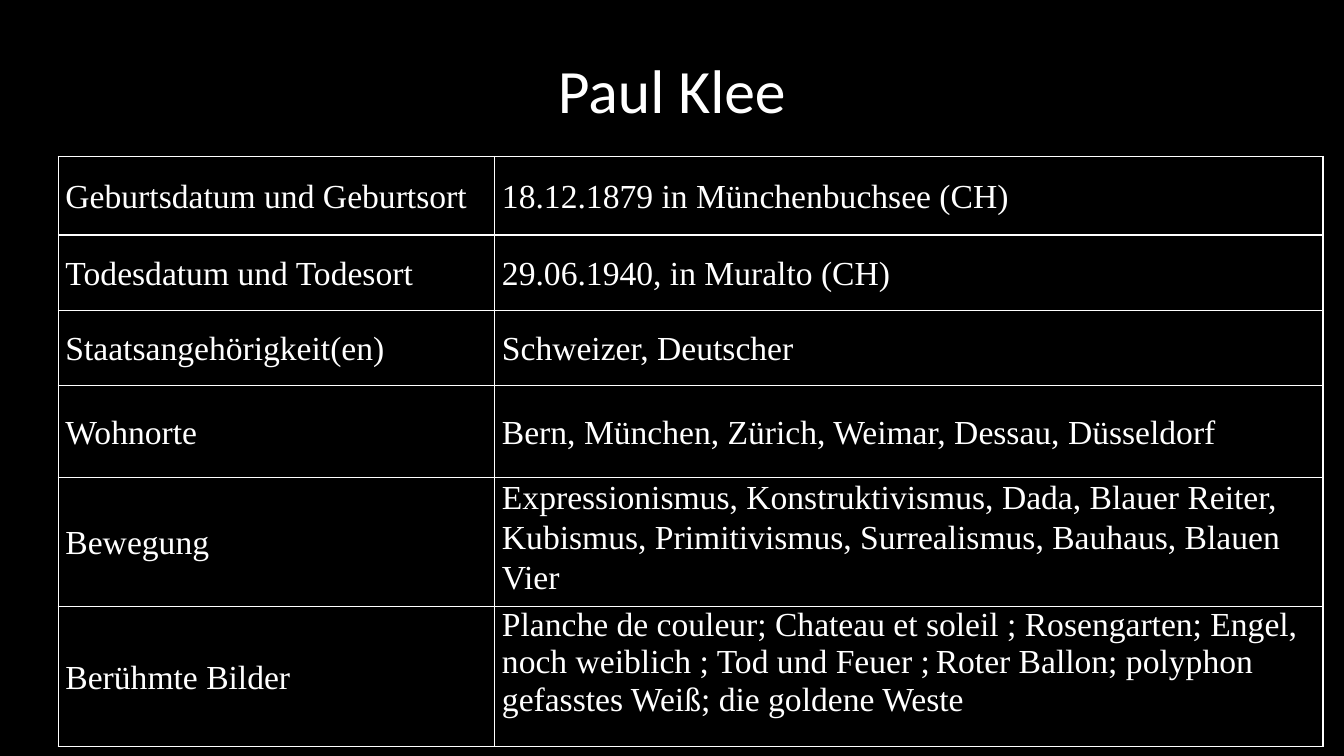
from lxml import etree
from pptx import Presentation
from pptx.dml.color import RGBColor
from pptx.enum.text import MSO_ANCHOR, PP_ALIGN
from pptx.oxml.ns import qn
from pptx.util import Cm, Pt

MIDDLE, TOP = MSO_ANCHOR.MIDDLE, MSO_ANCHOR.TOP
CENTER = PP_ALIGN.CENTER
BLACK = RGBColor(0, 0, 0)
WHITE = RGBColor(255, 255, 255)
TITLE_FONT = "Calibri"
TABLE_FONT = "Times New Roman"
THIN, THICK = 1, 1.5

COLUMN_WIDTHS = (11, 20.87)
# label, value, row height in cm, anchor of the value
FACTS = (
    ("Geburtsdatum und Geburtsort", "18.12.1879 in Münchenbuchsee (CH)", 1.98, MIDDLE),
    ("Todesdatum und Todesort", "29.06.1940, in Muralto (CH)", 1.9, MIDDLE),
    ("Staatsangehörigkeit(en)", "Schweizer, Deutscher", 1.9, MIDDLE),
    ("Wohnorte", "Bern, München, Zürich, Weimar, Dessau, Düsseldorf", 2.31, MIDDLE),
    ("Bewegung", "Expressionismus, Konstruktivismus, Dada, Blauer Reiter, Kubismus, "
     "Primitivismus, Surrealismus, Bauhaus, Blauen Vier", 3.2, TOP),
    ("Berühmte Bilder", "Planche de couleur; Chateau et soleil ; Rosengarten; Engel, "
     "noch weiblich ; Tod und Feuer ;", 3.51, TOP),
)
MORE_WORKS = "Roter Ballon; polyphon gefasstes Weiß; die goldene Weste"


def format_run(run, font_name, size, color=WHITE):
    run.font.name = font_name
    run.font.size = Pt(size)
    run.font.color.rgb = color


def add_title(slide, text):
    title = slide.shapes.add_textbox(Cm(2.33), Cm(1.01), Cm(29.21), Cm(2.7))
    text_frame = title.text_frame
    text_frame.word_wrap = True
    text_frame.vertical_anchor = MIDDLE
    text_frame.text = text
    paragraph = text_frame.paragraphs[0]
    paragraph.alignment = CENTER
    paragraph.line_spacing = 0.9
    format_run(paragraph.runs[0], TITLE_FONT, 44)


def set_borders(cell, top, bottom):
    """Draw white cell borders; top and bottom are widths in points."""
    properties = cell._tc.get_or_add_tcPr()
    for side, width in (("L", THIN), ("R", THIN), ("T", top), ("B", bottom)):
        line = etree.SubElement(properties, qn(f"a:ln{side}"), w=str(Pt(width)))
        fill = etree.SubElement(line, qn("a:solidFill"))
        etree.SubElement(fill, qn("a:srgbClr"), val=str(WHITE))


def fill_cell(cell, text, anchor):
    cell.margin_left = cell.margin_right = Cm(0.18)
    cell.margin_top = cell.margin_bottom = 0
    cell.vertical_anchor = anchor
    cell.fill.solid()
    cell.fill.fore_color.rgb = BLACK
    cell.text_frame.text = text
    paragraph = cell.text_frame.paragraphs[0]
    paragraph.line_spacing = 1.07
    format_run(paragraph.runs[0], TABLE_FONT, 24)


def append_works(cell):
    """Continue the list of works after a narrower space."""
    paragraph = cell.text_frame.paragraphs[0]
    paragraph.line_spacing = 1.0
    for text, font_name, size, color in ((" ", TITLE_FONT, 18, BLACK),
                                         (MORE_WORKS, TABLE_FONT, 24, WHITE)):
        run = paragraph.add_run()
        run.text = text
        format_run(run, font_name, size, color)


def add_facts_table(slide):
    height = sum(fact[2] for fact in FACTS)
    frame = slide.shapes.add_table(len(FACTS), len(COLUMN_WIDTHS), Cm(1.47), Cm(3.94),
                                   Cm(sum(COLUMN_WIDTHS)), Cm(height))
    table = frame.table
    table.first_row = table.horz_banding = False
    for column, width in zip(table.columns, COLUMN_WIDTHS):
        column.width = Cm(width)
    for index, (label, value, row_height, value_anchor) in enumerate(FACTS):
        table.rows[index].height = Cm(row_height)
        top = THICK if index == 1 else THIN
        bottom = THICK if index == 0 else THIN
        for column, (text, anchor) in enumerate(((label, MIDDLE), (value, value_anchor))):
            cell = table.cell(index, column)
            set_borders(cell, top, bottom)
            fill_cell(cell, text, anchor)
    append_works(table.cell(len(FACTS) - 1, 1))


def main():
    presentation = Presentation()
    presentation.slide_width = Cm(33.87)
    presentation.slide_height = Cm(19.05)
    slide = presentation.slides.add_slide(presentation.slide_layouts[6])
    slide.background.fill.solid()
    slide.background.fill.fore_color.rgb = BLACK
    add_title(slide, "Paul Klee")
    add_facts_table(slide)
    presentation.save("out.pptx")


if __name__ == "__main__":
    main()
